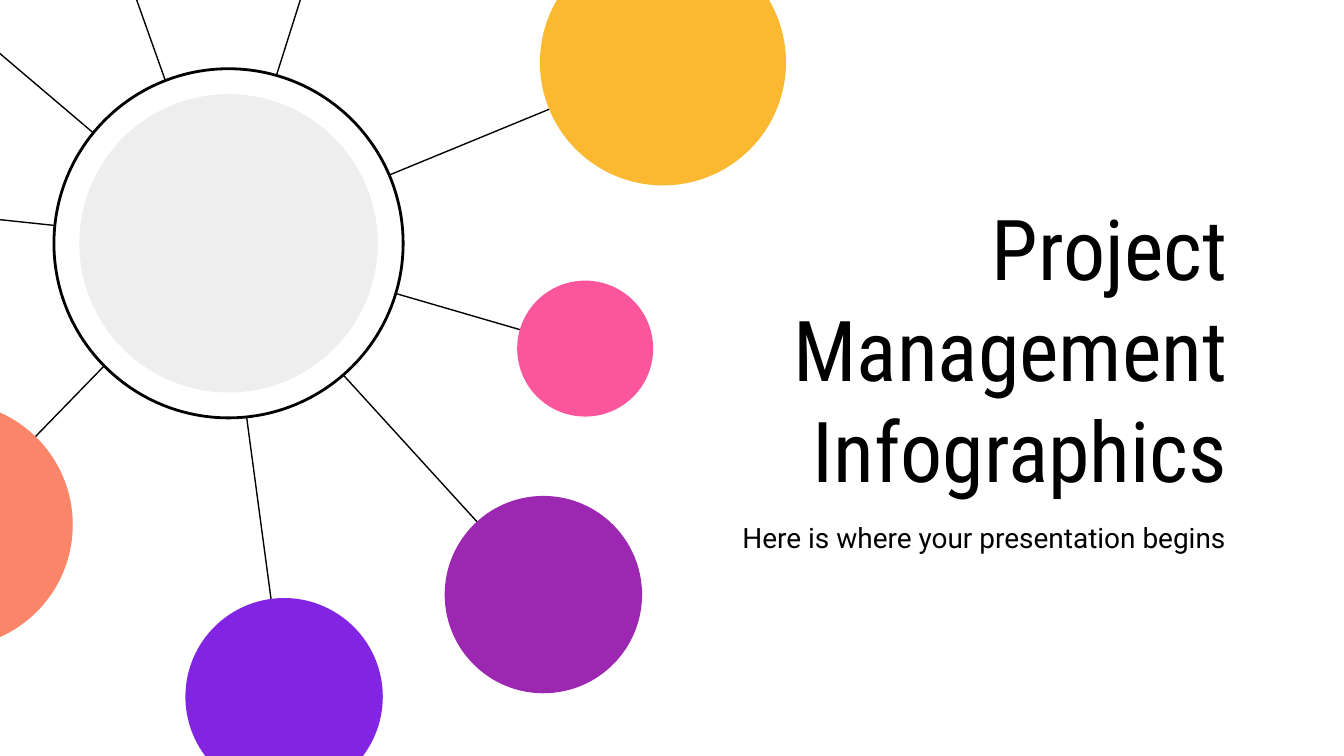
from lxml.etree import SubElement
from pptx import Presentation
from pptx.dml.color import RGBColor
from pptx.enum.shapes import MSO_CONNECTOR, MSO_SHAPE
from pptx.enum.text import MSO_ANCHOR, MSO_AUTO_SIZE, PP_ALIGN
from pptx.oxml.ns import qn
from pptx.util import Cm, Pt

BLACK = RGBColor(0x00, 0x00, 0x00)
WHITE = RGBColor(0xFF, 0xFF, 0xFF)
GREY = RGBColor(0xEE, 0xEE, 0xEE)
YELLOW = RGBColor(0xFB, 0xB8, 0x31)
CORAL = RGBColor(0xFB, 0x85, 0x69)
PURPLE = RGBColor(0x9C, 0x27, 0xB0)
VIOLET = RGBColor(0x82, 0x25, 0xE2)
PINK = RGBColor(0xFB, 0x56, 0x9C)

# All positions and diameters are in centimetres
HUB = (4.32, 4.6)
SPOKE_START = (4.22, 4.6)
SATELLITES = [  # centre, diameter, colour
    ((12.53, 1.18), 4.65, YELLOW),
    ((-0.95, 9.92), 4.65, CORAL),
    ((10.27, 11.24), 3.73, PURPLE),
    ((5.37, 13.17), 3.73, VIOLET),
    ((11.06, 6.59), 2.57, PINK),
]
OPEN_SPOKES = [(6.4, -2.29), (-2.57, -1.17), (-2.29, 3.91), (2.06, -1.47)]


def write_text(shape, text, *, font, size, color=BLACK, align=PP_ALIGN.RIGHT):
    """Fill a shape with one formatted paragraph."""
    frame = shape.text_frame
    frame.word_wrap = True
    frame.auto_size = MSO_AUTO_SIZE.NONE
    frame.vertical_anchor = MSO_ANCHOR.MIDDLE
    frame.margin_left = frame.margin_right = Cm(0.25)
    frame.margin_top = frame.margin_bottom = Cm(0.25)
    paragraph = frame.paragraphs[0]
    paragraph.alignment = align
    paragraph.space_before = Pt(0)
    run = paragraph.add_run()
    run.text = text
    run.font.name = font
    run.font.size = Pt(size)
    run.font.color.rgb = color


class SlideBuilder:
    """Holds the slide and its style."""

    heading_font = "Roboto Condensed"
    body_font = "Roboto"
    spoke_width = 0.75
    ring_width = 1.5

    def __init__(self, slide):
        self.slide = slide

    def placeholder(self, index, text, box, **text_format):
        shape = self.slide.placeholders[index]
        shape.left, shape.top, shape.width, shape.height = map(Cm, box)
        write_text(shape, text, **text_format)

    def spoke(self, end):
        line = self.slide.shapes.add_connector(
            MSO_CONNECTOR.STRAIGHT, *map(Cm, (*end, *SPOKE_START)))
        line.line.color.rgb = BLACK
        line.line.width = Pt(self.spoke_width)
        SubElement(line._element.spPr, qn("a:effectLst"))

    def circle(self, center, diameter, fill, outline=None):
        left, top = (value - diameter / 2 for value in center)
        shape = self.slide.shapes.add_shape(
            MSO_SHAPE.OVAL, *map(Cm, (left, top, diameter, diameter)))
        shape.shadow.inherit = False
        shape.fill.solid()
        shape.fill.fore_color.rgb = fill
        if outline is None:
            shape.line.fill.background()
        else:
            shape.line.color.rgb = outline
            shape.line.width = Pt(self.ring_width)


def main():
    presentation = Presentation()
    presentation.slide_width = Cm(25.4)
    presentation.slide_height = Cm(14.29)
    slide = presentation.slides.add_slide(presentation.slide_layouts[0])
    builder = SlideBuilder(slide)

    # Title and subtitle
    builder.placeholder(0, "Project Management Infographics", (13.89, 3.56, 9.55, 6.02),
                        font=builder.heading_font, size=45)
    builder.placeholder(1, "Here is where your presentation begins", (12.47, 9.58, 10.95, 1.17),
                        font=builder.body_font, size=15)

    # Spokes and the circles they lead to
    for end in OPEN_SPOKES:
        builder.spoke(end)
    for center, diameter, color in SATELLITES:
        builder.spoke(center)
        builder.circle(center, diameter, color)

    # Central hub
    builder.circle(HUB, 6.6, WHITE, outline=BLACK)
    builder.circle(HUB, 5.64, GREY)

    presentation.save("out.pptx")


if __name__ == "__main__":
    main()
